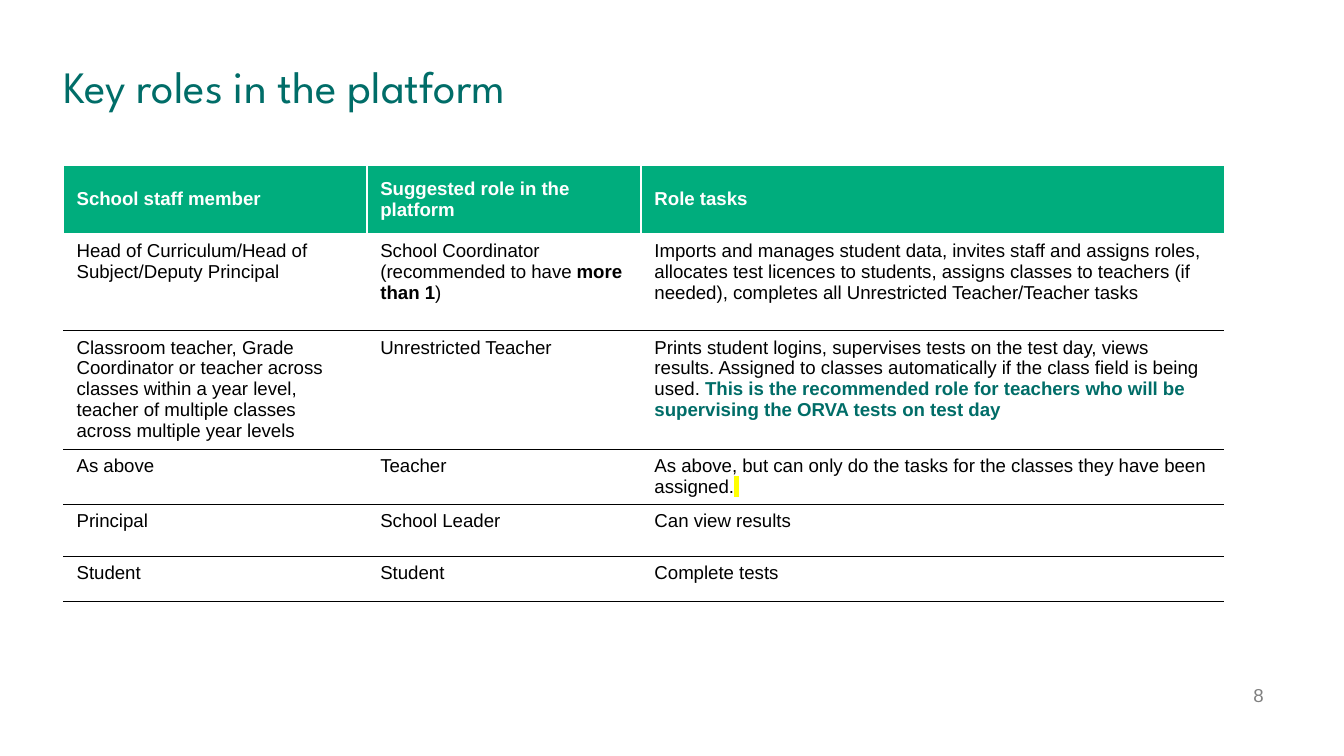
from lxml.etree import SubElement
from pptx import Presentation
from pptx.dml.color import RGBColor
from pptx.enum.text import MSO_ANCHOR as Anchor, PP_ALIGN as Align
from pptx.oxml.ns import qn
from pptx.util import Inches, Pt

COLORS = {
    "green": "00AD7D",
    "teal": "006D68",
    "white": "FFFFFF",
    "black": "000000",
    "gray": "808080",
    "yellow": "FFFF00",
}
COLUMN_WIDTHS = [2.26, 2.04, 4.34]
ROW_HEIGHTS = [0.51, 0.72, 0.88, 0.4, 0.39, 0.33]
HEADERS = ["School staff member", "Suggested role in the platform", "Role tasks"]
ROLES = [
    [
        [("Head of Curriculum/Head of Subject/Deputy Principal", "plain")],
        [
            ("School Coordinator (recommended to have ", "plain"),
            ("more than 1", "bold"),
            (")", "plain"),
        ],
        [(
            "Imports and manages student data, invites staff and assigns roles, "
            "allocates test licences to students, assigns classes to teachers "
            "(if needed), completes all Unrestricted Teacher/Teacher tasks",
            "plain",
        )],
    ],
    [
        [(
            "Classroom teacher, Grade Coordinator or teacher across classes within "
            "a year level, teacher of multiple classes across multiple year levels",
            "plain",
        )],
        [("Unrestricted Teacher", "plain")],
        [
            (
                "Prints student logins, supervises tests on the test day, views "
                "results. Assigned to classes automatically if the class field is "
                "being used. ",
                "plain",
            ),
            (
                "This is the recommended role for teachers who will be supervising "
                "the ORVA tests on test day",
                "accent",
            ),
        ],
    ],
    [
        [("As above", "plain")],
        [("Teacher", "plain")],
        [
            (
                "As above, but can only do the tasks for the classes they have been "
                "assigned.",
                "plain",
            ),
            (" ", "marked"),
        ],
    ],
    [
        [("Principal", "plain")],
        [("School Leader", "plain")],
        [("Can view results", "plain")],
    ],
    [
        [("Student", "plain")],
        [("Student", "plain")],
        [("Complete tests", "plain")],
    ],
]


def rgb(name):
    """Return the named palette color."""
    return RGBColor.from_string(COLORS[name])


def add_run(paragraph, text, color, size=10, font="Arial", bold=False):
    """Append a formatted run and return it."""
    run = paragraph.add_run()
    run.text = text
    run.font.name = font
    run.font.size = Pt(size)
    run.font.bold = bold
    run.font.color.rgb = rgb(color)
    return run


def highlight(run, color):
    """Mark a run with a background color."""
    mark = SubElement(run.font._element, qn("a:highlight"))
    SubElement(mark, qn("a:srgbClr"), val=COLORS[color])
    run.font._element.find(qn("a:latin")).addprevious(mark)


def set_borders(cell, borders):
    """Draw cell edges from a dict of edge to color and width in points."""
    properties = cell._tc.get_or_add_tcPr()
    for index, edge in enumerate(("L", "R", "T", "B")):
        color, width = borders.get(edge, (None, 0))
        line = properties.makeelement(qn(f"a:ln{edge}"), {"w": str(Pt(width))})
        if color:
            fill = SubElement(line, qn("a:solidFill"))
            SubElement(fill, qn("a:srgbClr"), val=COLORS[color])
        else:
            SubElement(line, qn("a:noFill"))
        properties.insert(index, line)


def fill_cell(cell, runs, fill, borders, anchor):
    """Write the runs of one cell and style it."""
    cell.fill.solid()
    cell.fill.fore_color.rgb = rgb(fill)
    cell.vertical_anchor = anchor
    set_borders(cell, borders)
    paragraph = cell.text_frame.paragraphs[0]
    styles = {"header": "white", "accent": "teal"}
    for text, style in runs:
        bold = style in ("header", "bold", "accent")
        run = add_run(paragraph, text, styles.get(style, "black"), bold=bold)
        if style == "marked":
            highlight(run, "yellow")


def add_title(slide, left, top, width, height):
    """Place the slide title."""
    title = slide.shapes.title
    title.left, title.top = Inches(left), Inches(top)
    title.width, title.height = Inches(width), Inches(height)
    frame = title.text_frame
    frame.margin_left = frame.margin_right = 0
    frame.margin_top = frame.margin_bottom = 0
    frame.vertical_anchor = Anchor.TOP
    paragraph = frame.paragraphs[0]
    paragraph.alignment = Align.LEFT
    add_run(paragraph, "Key roles in the platform", "teal", 24, "League Spartan")


def add_roles_table(slide, left, top):
    """Place the table of staff members, roles and tasks."""
    table = slide.shapes.add_table(
        len(ROW_HEIGHTS), len(COLUMN_WIDTHS), Inches(left), Inches(top),
        Inches(sum(COLUMN_WIDTHS)), Inches(sum(ROW_HEIGHTS)),
    ).table
    table.horz_banding = False
    for column, width in zip(table.columns, COLUMN_WIDTHS):
        column.width = Inches(width)
    for row, height in zip(table.rows, ROW_HEIGHTS):
        row.height = Inches(height)

    header_borders = {edge: ("white", 1) for edge in "LRTB"}
    for cell, text in zip(table.rows[0].cells, HEADERS):
        fill_cell(cell, [(text, "header")], "green", header_borders, Anchor.MIDDLE)
    for index, role in enumerate(ROLES, start=1):
        upper = ("white", 1) if index == 1 else ("black", 0.25)
        borders = {"T": upper, "B": ("black", 0.25)}
        for cell, runs in zip(table.rows[index].cells, role):
            fill_cell(cell, runs, "white", borders, Anchor.TOP)


def add_page_number(slide, left, top, width, height):
    """Place the page number."""
    box = slide.shapes.add_textbox(
        Inches(left), Inches(top), Inches(width), Inches(height)
    )
    frame = box.text_frame
    frame.word_wrap = True
    frame.vertical_anchor = Anchor.MIDDLE
    paragraph = frame.paragraphs[0]
    paragraph.alignment = Align.RIGHT
    add_run(paragraph, "8", "gray")


def main():
    """Build and save the presentation."""
    presentation = Presentation()
    presentation.slide_width = Inches(10)
    presentation.slide_height = presentation.slide_width * 9 // 16
    slide = presentation.slides.add_slide(presentation.slide_layouts[5])
    add_roles_table(slide, 0.47, 1.23)
    add_title(slide, 0.47, 0.44, 8.61, 0.4)
    add_page_number(slide, 7.17, 5.06, 2.33, 0.22)
    presentation.save("out.pptx")


if __name__ == "__main__":
    main()
